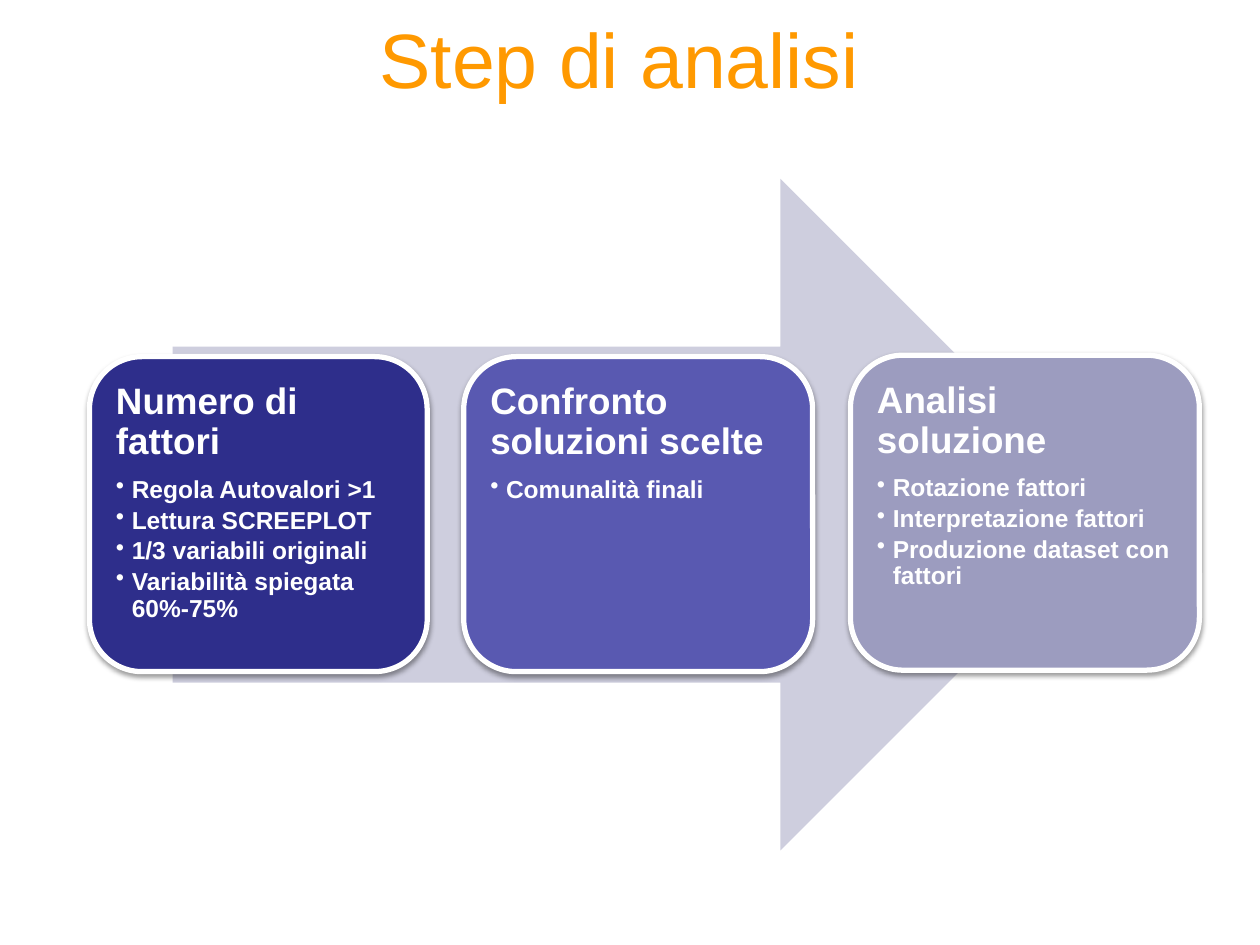
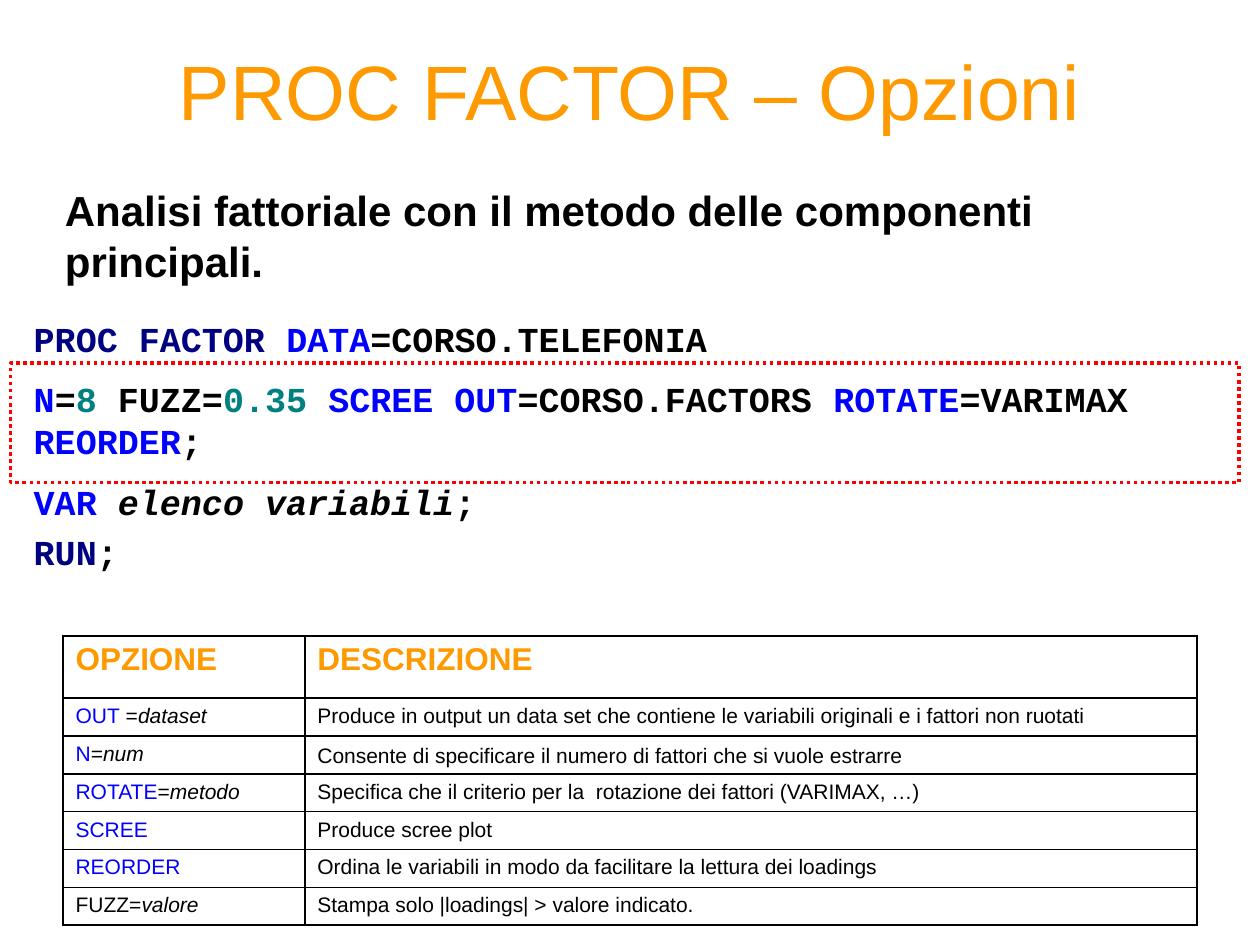
from pptx import Presentation
from pptx import oxml
from pptx.dml import color
from pptx.enum import dml, shapes, text
from pptx.oxml import ns
from pptx.util import Pt

ORANGE = color.RGBColor(0xFF, 0x99, 0x00)
WHITE = color.RGBColor(0xFF, 0xFF, 0xFF)
BLACK = color.RGBColor(0x00, 0x00, 0x00)
RED = color.RGBColor(0xFF, 0x00, 0x00)
BLUE = color.RGBColor(0x00, 0x00, 0xFF)
NAVY = color.RGBColor(0x00, 0x00, 0x80)
TEAL = color.RGBColor(0x00, 0x80, 0x80)
ARROW = color.RGBColor(0xCE, 0xCE, 0xDE)
STEP_DARK = color.RGBColor(0x2E, 0x2E, 0x8B)
STEP_MEDIUM = color.RGBColor(0x59, 0x59, 0xB1)
STEP_LIGHT = color.RGBColor(0x9C, 0x9C, 0xBF)

TITLE = {"name": "Arial", "size": Pt(44)}
STEP_HEADING = {"name": "Arial", "size": Pt(21), "bold": True}
STEP_BULLET = {"name": "Arial", "size": Pt(14), "bold": True}
SUBTITLE = {"name": "Arial", "size": Pt(24), "bold": True}
CODE = {"name": "Courier New", "size": Pt(20), "bold": True}
TABLE_HEADER = {"name": "Arial", "size": Pt(18), "bold": True}
TABLE_BODY = {"name": "Arial", "size": Pt(12), "bold": False}


def add_run(paragraph, wording, font_format, colour, italic=False):
    run = paragraph.add_run()
    run.text = wording
    for attribute, value in font_format.items():
        setattr(run.font, attribute, value)
    run.font.italic = italic
    run.font.color.rgb = colour


def add_titled_slide(wording, left, top):
    slide = presentation.slides.add_slide(presentation.slide_layouts[5])
    title = slide.shapes.title
    place = {"left": Pt(left), "top": Pt(top), "width": Pt(648), "height": Pt(90)}
    for attribute, value in place.items():
        setattr(title, attribute, value)
    title.text_frame.vertical_anchor = text.MSO_ANCHOR.MIDDLE
    paragraph = title.text_frame.paragraphs[0]
    paragraph.alignment = text.PP_ALIGN.CENTER
    add_run(paragraph, wording, TITLE, ORANGE)
    return slide


presentation = Presentation()
presentation.slide_width = Pt(720)
presentation.slide_height = Pt(540)

# Slide 1: analysis steps on an arrow
slide = add_titled_slide("Step di analisi", 30, -12)
arrow = slide.shapes.add_shape(
    shapes.MSO_SHAPE.RIGHT_ARROW, Pt(98.6), Pt(102.2), Pt(539.3), Pt(383.8))
arrow.shadow.inherit = False
arrow.fill.solid()
arrow.fill.fore_color.rgb = ARROW
arrow.line.fill.background()

steps = [
    (51.1, 203.8, 193, STEP_DARK, "Numero di fattori",
     ["Regola Autovalori >1", "Lettura SCREEPLOT", "1/3 variabili originali",
      "Variabilità spiegata 60%-75%"]),
    (265, 203.8, 199.4, STEP_MEDIUM, "Confronto soluzioni scelte",
     ["Comunalità finali"]),
    (486, 203, 199.4, STEP_LIGHT, "Analisi soluzione",
     ["Rotazione fattori", "Interpretazione fattori",
      "Produzione dataset con fattori"]),
]
for left, top, width, fill, heading, bullets in steps:
    box = slide.shapes.add_shape(
        shapes.MSO_SHAPE.ROUNDED_RECTANGLE, Pt(left), Pt(top), Pt(width), Pt(180))
    box.fill.solid()
    box.fill.fore_color.rgb = fill
    box.line.color.rgb = WHITE
    box.line.width = Pt(3)

    # Soft shadow below the box
    box.shadow.inherit = False
    box._element.spPr.find(ns.qn("a:effectLst")).append(oxml.parse_xml(
        f'<a:outerShdw {ns.nsdecls("a")} blurRad="{Pt(3.1)}" dist="{Pt(1.6)}" '
        'dir="5400000" rotWithShape="0"><a:srgbClr val="000000">'
        '<a:alpha val="38000"/></a:srgbClr></a:outerShdw>'))

    frame = box.text_frame
    frame.word_wrap = True
    frame.vertical_anchor = text.MSO_ANCHOR.TOP
    for side in ("left", "top", "right", "bottom"):
        setattr(frame, f"margin_{side}", Pt(6.4))
    paragraph = frame.paragraphs[0]
    paragraph.space_after = Pt(8.4)
    add_run(paragraph, heading, STEP_HEADING, WHITE)
    for bullet in bullets:
        paragraph = frame.add_paragraph()
        paragraph.level = 1
        paragraph.space_after = Pt(2.4)
        add_run(paragraph, bullet, STEP_BULLET, WHITE)
        properties = paragraph._p.get_or_add_pPr()
        properties.set("marL", str(Pt(9)))
        properties.set("indent", str(-Pt(9)))
        properties.append(oxml.parse_xml(f'<a:buChar {ns.nsdecls("a")} char="•"/>'))
    for paragraph in frame.paragraphs:
        paragraph.alignment = text.PP_ALIGN.LEFT
        paragraph.line_spacing = 0.9

# Slide 2: procedure options
slide = add_titled_slide("PROC FACTOR – Opzioni", 36, 6)

# Code: space before each line, then its coloured runs
code_lines = [
    (0, [("PROC FACTOR ", NAVY), ("DATA", BLUE), ("=CORSO.TELEFONIA", BLACK)]),
    (10.5, [("N", BLUE), ("=", BLACK), ("8", TEAL), (" FUZZ=", BLACK),
            ("0.35 ", TEAL), ("SCREE OUT", BLUE), ("=CORSO.FACTORS ", BLACK),
            ("ROTATE", BLUE), ("=VARIMAX ", BLACK), ("REORDER", BLUE), (";", BLACK)]),
    (10.5, [("VAR ", BLUE), ("elenco variabili", BLACK, True), (";", BLACK)]),
    (5, [("RUN", NAVY), (";", BLACK)]),
]
code_box = slide.shapes.add_textbox(Pt(12.2), Pt(177.8), Pt(732), Pt(172))
code_box.text_frame.word_wrap = True
for index, (space_before, runs) in enumerate(code_lines):
    frame = code_box.text_frame
    paragraph = frame.add_paragraph() if index else frame.paragraphs[0]
    paragraph.space_before = Pt(space_before)
    for wording, colour, *italic in runs:
        add_run(paragraph, wording, CODE, colour, *italic)

# Options table
options = [
    ([("OPZIONE", ORANGE)], "DESCRIZIONE"),
    ([("OUT", BLUE), (" =", BLACK), ("dataset", BLACK, True)],
     "Produce in output un data set che contiene le variabili originali e i fattori non ruotati"),
    ([("N", BLUE), ("=", BLACK), ("num", BLACK, True)],
     "Consente di specificare il numero di fattori che si vuole estrarre"),
    ([("ROTATE", BLUE), ("=", BLACK), ("metodo", BLACK, True)],
     "Specifica che il criterio per la  rotazione dei fattori (VARIMAX, …)"),
    ([("SCREE", BLUE)], "Produce scree plot"),
    ([("REORDER", BLUE)],
     "Ordina le variabili in modo da facilitare la lettura dei loadings"),
    ([("FUZZ=", BLACK), ("valore", BLACK, True)],
     "Stampa solo |loadings| > valore indicato."),
]
table = slide.shapes.add_table(
    len(options), 2, Pt(36), Pt(363.4), Pt(648), Pt(165.6)).table
table.first_row = False
table.horz_banding = False
table.columns[0].width = Pt(138.2)
table.columns[1].width = Pt(509.8)
for row, (option, description) in enumerate(options):
    table.rows[row].height = Pt(21.6 if row else 35.5)
    font_format = TABLE_BODY if row else TABLE_HEADER
    description_runs = [(description, BLACK if row else ORANGE)]
    for column, runs in enumerate((option, description_runs)):
        cell = table.cell(row, column)
        for wording, colour, *italic in runs:
            add_run(cell.text_frame.paragraphs[0], wording, font_format, colour, *italic)
        for edge in ("lnL", "lnR", "lnT", "lnB"):
            cell._tc.get_or_add_tcPr().append(oxml.parse_xml(
                f'<a:{edge} {ns.nsdecls("a")} w="{Pt(1)}"><a:solidFill>'
                f'<a:srgbClr val="{BLACK}"/></a:solidFill></a:{edge}>'))
        cell.fill.background()
table.cell(2, 1).vertical_anchor = text.MSO_ANCHOR.BOTTOM

# Dotted frame around the options line
highlight = slide.shapes.add_shape(
    shapes.MSO_SHAPE.RECTANGLE, Pt(6), Pt(207.4), Pt(702), Pt(68.4))
highlight.shadow.inherit = False
highlight.fill.background()
highlight.line.color.rgb = RED
highlight.line.width = Pt(2)
highlight.line.dash_style = dml.MSO_LINE.ROUND_DOT

# Subtitle
subtitle = slide.shapes.add_textbox(Pt(30), Pt(102), Pt(666), Pt(36))
subtitle.text_frame.word_wrap = True
add_run(subtitle.text_frame.paragraphs[0],
        "Analisi fattoriale con il metodo delle componenti principali.",
        SUBTITLE, BLACK)

presentation.save("out.pptx")
